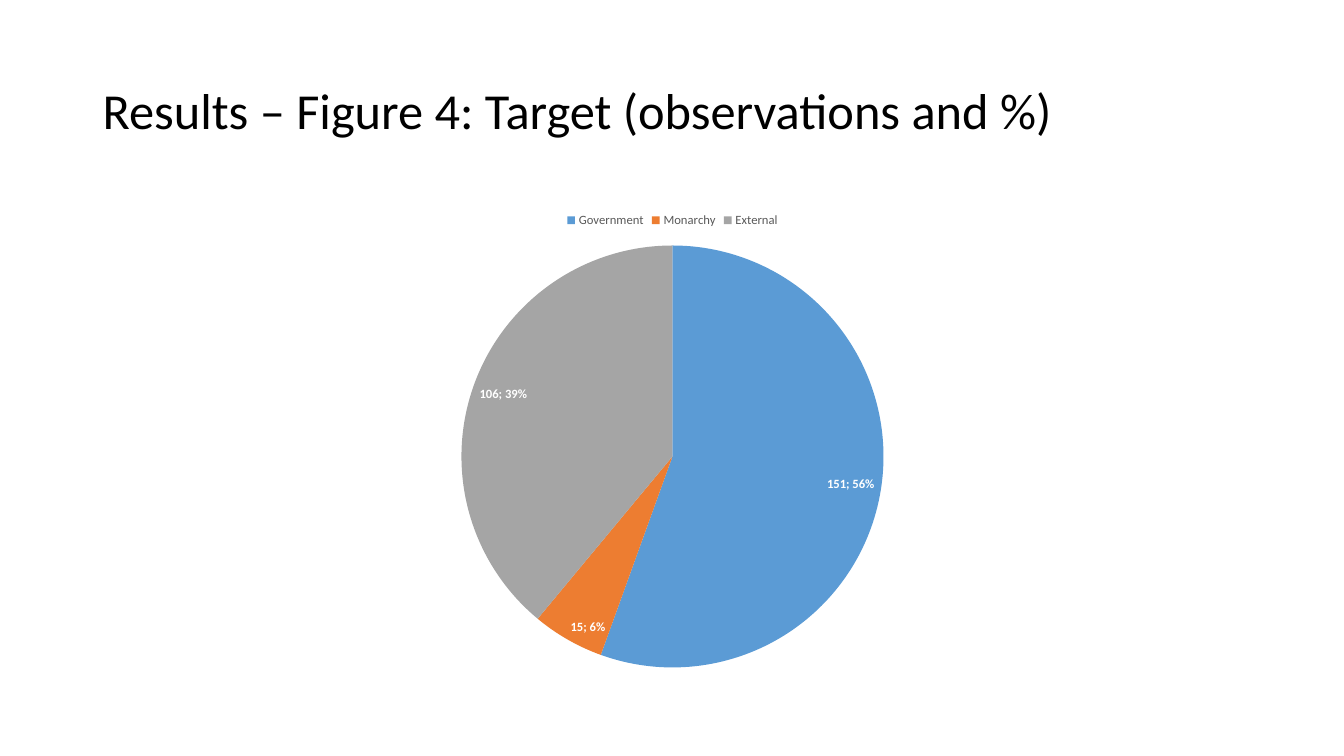
from lxml import etree
from pptx import Presentation
from pptx.chart.data import CategoryChartData
from pptx.dml.color import RGBColor
from pptx.enum.chart import XL_CHART_TYPE, XL_LABEL_POSITION as LABEL_POS, XL_LEGEND_POSITION as LEGEND_POS
from pptx.enum.text import MSO_ANCHOR
from pptx.oxml.ns import qn
from pptx.util import Inches, Pt

BLACK = RGBColor(0x00, 0x00, 0x00)
WHITE = RGBColor(0xFF, 0xFF, 0xFF)
LEGEND_GRAY = RGBColor(0x59, 0x59, 0x59)
BLUE = RGBColor(0x5B, 0x9B, 0xD5)
ORANGE = RGBColor(0xED, 0x7D, 0x31)
GRAY = RGBColor(0xA5, 0xA5, 0xA5)

LEFT, WIDTH = Inches(0.92), Inches(11.5)
TARGETS = [("Government", 151, BLUE), ("Monarchy", 15, ORANGE), ("External", 106, GRAY)]


def set_font(font, size, color, bold=False):
    font.name = "Calibri"
    font.size = Pt(size)
    font.bold = bold
    font.color.rgb = color


prs = Presentation()
prs.slide_width, prs.slide_height = Inches(13.33), Inches(7.5)
s = prs.slides.add_slide(prs.slide_layouts[6])

tf = s.shapes.add_textbox(LEFT, Inches(0.4), WIDTH, Inches(1.45)).text_frame
tf.word_wrap = True
tf.vertical_anchor = MSO_ANCHOR.MIDDLE
p = tf.paragraphs[0]
p.text = "Results – Figure 4: Target (observations and %)"
p.line_spacing = 0.9
set_font(p.font, 36, BLACK)

data = CategoryChartData()
data.categories = [name for name, count, color in TARGETS]
data.add_series("Series 1", [count for name, count, color in TARGETS])
chart = s.shapes.add_chart(XL_CHART_TYPE.PIE, LEFT, Inches(2), WIDTH, Inches(4.76), data).chart
chart.has_title = False
set_font(chart.font, 10, BLACK)

chart.has_legend = True
chart.legend.position = LEGEND_POS.TOP
chart.legend.include_in_layout = False
set_font(chart.legend.font, 9, LEGEND_GRAY)

plot = chart.plots[0]
plot.vary_by_categories = True
series = plot.series[0]
for i, (name, count, color) in enumerate(TARGETS):
    fill = series.points[i].format.fill
    fill.solid()
    fill.fore_color.rgb = color

labels = series.data_labels
labels.show_value = True
labels.show_percentage = True
labels.position = LABEL_POS.INSIDE_END
set_font(labels.font, 9, WHITE, bold=True)
separator = etree.Element(qn("c:separator"))
separator.text = "; "
series._element.find(qn("c:dLbls")).find(qn("c:showBubbleSize")).addnext(separator)

prs.save("out.pptx")
